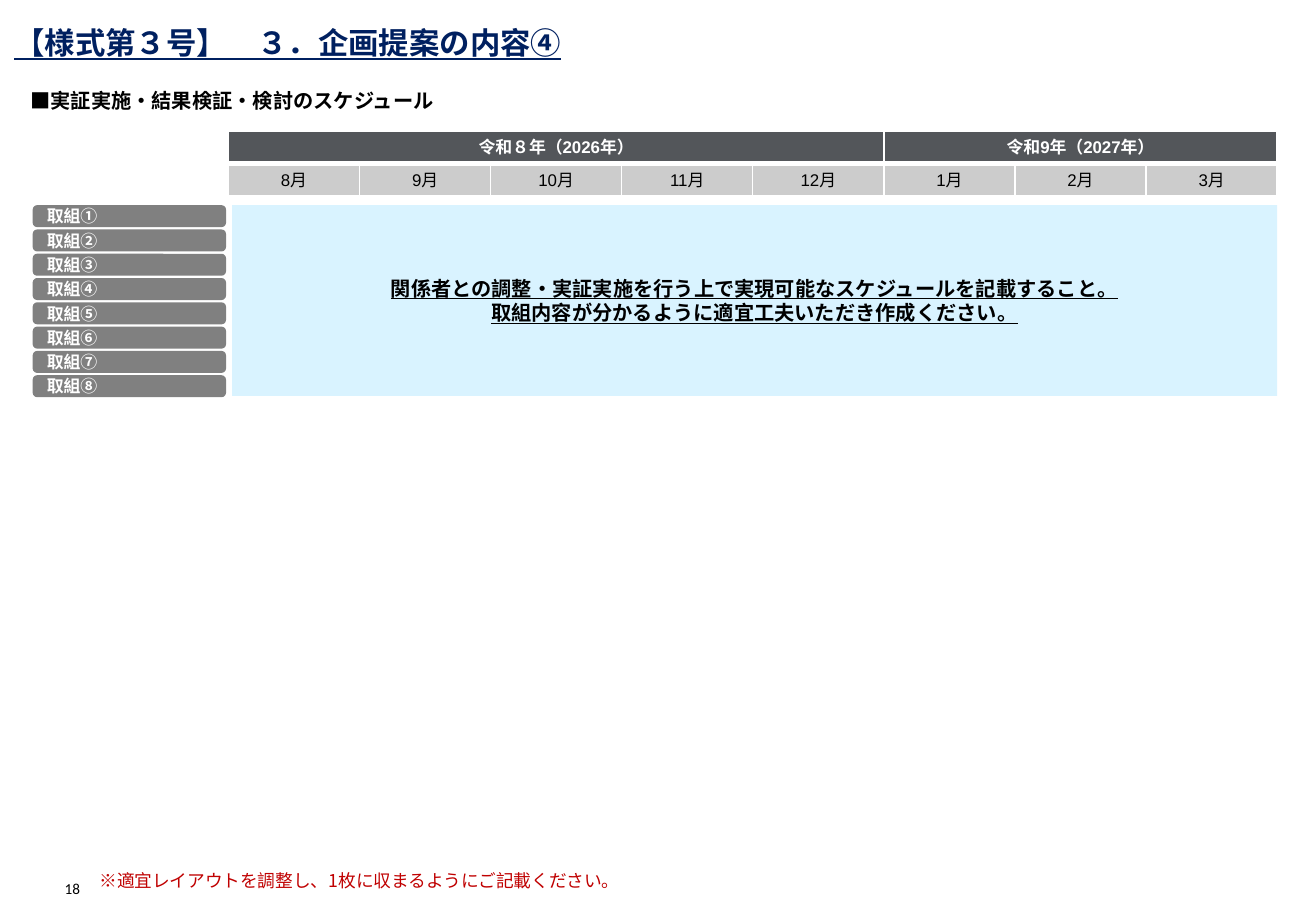
import pptx
import pptx.util
import pptx.dml.color
import pptx.enum.shapes
import pptx.enum.text
import pptx.oxml.ns
from lxml import etree
from pptx.util import Inches, Pt

TITLE = "【様式第３号】\u3000３．企画提案の内容④".replace("\u3000", "　")
HEADING = "■実証実施・結果検証・検討のスケジュール"
YEARS = [("令和８年（2026年）", 5), ("令和9年（2027年）", 3)]
MONTHS = ["8月", "9月", "10月", "11月", "12月", "1月", "2月", "3月"]
TASKS = ["取組" + mark for mark in "①②③④⑤⑥⑦⑧"]
GUIDANCE = [
    "関係者との調整・実証実施を行う上で実現可能なスケジュールを記載すること。",
    "取組内容が分かるように適宜工夫いただき作成ください。",
]
FOOTNOTE = "※適宜レイアウトを調整し、1枚に収まるようにご記載ください。"
PAGE = "18"

THEME = {
    "jp": "Noto Sans CJK JP", "latin": "Arial", "number": "Calibri",
    "navy": "002060", "black": "000000", "white": "FFFFFF", "red": "C00000",
    "year": "53565A", "month": "CCCCCC", "task": "808080", "panel": "D9F3FF",
    "title": 18, "body": 12, "label": 10, "note": 10.5, "page": 9,
}
ALIGN = pptx.enum.text.PP_ALIGN
ANCHOR = pptx.enum.text.MSO_ANCHOR
SHAPE = pptx.enum.shapes.MSO_SHAPE


def color(name):
    return pptx.dml.color.RGBColor.from_string(THEME[name])


def write(tf, lines, font, size, ink, bold=False, underline=False,
          align=ALIGN.LEFT, spacing=None):
    for i, line in enumerate(lines):
        p = tf.add_paragraph() if i else tf.paragraphs[0]
        p.alignment = align
        if spacing:
            p.line_spacing = spacing
        r = p.add_run()
        r.text = line
        r.font.name = THEME[font]
        r.font.size = Pt(THEME[size])
        r.font.bold = bold
        r.font.underline = underline
        r.font.color.rgb = color(ink)
        ea = etree.SubElement(r.font._element, pptx.oxml.ns.qn("a:ea"))
        ea.set("typeface", THEME[font])


def frame(sp, anchor=ANCHOR.TOP, inset=(0, 0), wrap=True):
    """Set wrapping, anchor and (side, top and bottom) insets."""
    tf = sp.text_frame
    tf.word_wrap = wrap
    tf.vertical_anchor = anchor
    tf.margin_left = tf.margin_right = Inches(inset[0])
    tf.margin_top = tf.margin_bottom = Inches(inset[1])
    return tf


def add_text(s, box, **options):
    return frame(s.shapes.add_textbox(*map(Inches, box)), **options)


def add_block(s, kind, box, fill, line=None, **options):
    sp = s.shapes.add_shape(kind, *map(Inches, box))
    sp.shadow.inherit = False
    sp.fill.solid()
    sp.fill.fore_color.rgb = color(fill)
    if line:
        sp.line.color.rgb = color(fill)
        sp.line.width = Pt(line)
    else:
        sp.line.fill.background()
    return frame(sp, anchor=ANCHOR.MIDDLE, **options)


def style_cell(cell, fill, widths):
    """Fill a cell and give it white borders, widths keyed by side."""
    tcPr = cell._tc.get_or_add_tcPr()
    for side in "LRTB":
        ln = etree.SubElement(tcPr, pptx.oxml.ns.qn("a:ln" + side),
                              w=str(Pt(widths.get(side, 1))))
        solid = etree.SubElement(ln, pptx.oxml.ns.qn("a:solidFill"))
        etree.SubElement(solid, pptx.oxml.ns.qn("a:srgbClr"), val=THEME["white"])
    cell.fill.solid()
    cell.fill.fore_color.rgb = color(fill)
    cell.vertical_anchor = ANCHOR.MIDDLE


def add_calendar(s, left, top, width, row_height):
    table = s.shapes.add_table(2, len(MONTHS), Inches(left), Inches(top),
                               Inches(width), Inches(2 * row_height)).table
    for column in table.columns:
        column.width = Inches(width / len(MONTHS))
    centred = {"align": ALIGN.CENTER, "spacing": Pt(12)}
    for i, month in enumerate(MONTHS):
        style_cell(table.cell(0, i), "year", {"B": 3})
        style_cell(table.cell(1, i), "month", {"T": 3})
        write(table.cell(1, i).text_frame, [month], "latin", "label", "black", **centred)
    start = 0
    for year, span in YEARS:
        cell = table.cell(0, start)
        cell.merge(table.cell(0, start + span - 1))
        write(cell.text_frame, [year], "latin", "label", "white", bold=True, **centred)
        start += span


def main():
    prs = pptx.Presentation()
    prs.slide_width, prs.slide_height = Inches(10.83), Inches(7.5)
    s = prs.slides.add_slide(prs.slide_layouts[6])

    tf = add_text(s, (0.02, 0, 5.37, 0.51), inset=(0.1, 0.05))
    write(tf, [TITLE], "jp", "title", "navy", bold=True, underline=True, spacing=1.5)
    tf = add_text(s, (0.17, 0.71, 3.52, 0.24), inset=(0.08, 0.02))
    write(tf, [HEADING], "jp", "body", "black", bold=True)

    add_calendar(s, 1.88, 1.08, 8.63, 0.26)

    tf = add_block(s, SHAPE.RECTANGLE, (1.91, 1.69, 8.6, 1.57), "panel")
    write(tf, GUIDANCE, "latin", "body", "black", bold=True, underline=True,
          align=ALIGN.CENTER)
    for i, task in enumerate(TASKS):
        tf = add_block(s, SHAPE.ROUNDED_RECTANGLE, (0.28, 1.7 + 0.2 * i, 1.57, 0.16),
                       "task", line=1.5, inset=(0.1, 0))
        write(tf, [task], "jp", "label", "white", bold=True)

    tf = add_text(s, (0.82, 7.02, 9.8, 0.47), anchor=ANCHOR.MIDDLE)
    write(tf, [FOOTNOTE], "jp", "note", "red", spacing=Pt(12))
    tf = add_text(s, (0.46, 7.2, 0.2, 0.19), anchor=ANCHOR.BOTTOM, wrap=False)
    write(tf, [PAGE], "number", "page", "black", align=ALIGN.RIGHT)

    prs.save("out.pptx")


if __name__ == "__main__":
    main()
